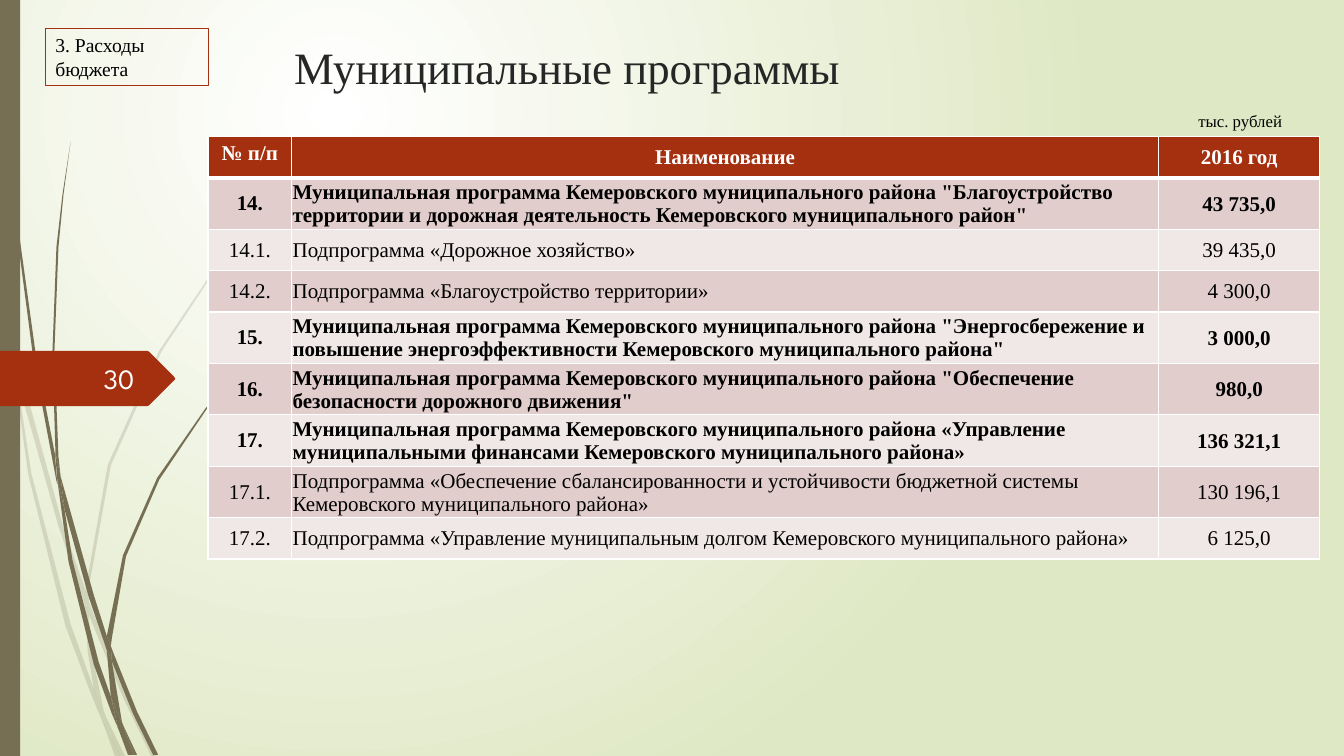
"""Slide with the municipal programmes of the district budget."""
from lxml import etree
from pptx import Presentation
from pptx.dml.color import RGBColor
from pptx.enum import shapes, text
from pptx.oxml import parse_xml
from pptx.oxml import ns
from pptx.util import Pt

OLIVE = RGBColor(0x76, 0x6F, 0x54)
RUST = RGBColor(0xA5, 0x30, 0x10)
ROSE = RGBColor(0xE1, 0xCD, 0xCC)
PALE_ROSE = RGBColor(0xF0, 0xE8, 0xE7)
MEADOW = RGBColor(0xDF, 0xE8, 0xC4)
WHITE = RGBColor(0xFF, 0xFF, 0xFF)
NUMBER_WHITE = RGBColor(0xFE, 0xFF, 0xFF)
BLACK = RGBColor(0, 0, 0)
CHARCOAL = RGBColor(0x26, 0x26, 0x26)

SERIF = "Times New Roman"
OUTLINE_UNIT = Pt(0.72)
LEFT, CENTER, RIGHT = text.PP_ALIGN.LEFT, text.PP_ALIGN.CENTER, text.PP_ALIGN.RIGHT
TOP, MIDDLE = text.MSO_ANCHOR.TOP, text.MSO_ANCHOR.MIDDLE

FAINT_STALKS = [
    [(11, 350), (9, 322), (0, 282), (0, 299), (10, 344)],
    [(58, 522), (84, 599), (85, 586), (62, 520), (14, 345), (17, 376)],
    [(92, 607), (88, 596), (88, 610), (123, 694), (150, 750), (155, 750), (127, 692)],
    [(119, 750), (124, 750), (105, 711)],
    [(93, 683), (70, 619), (31, 469), (17, 376), (11, 350), (28, 470), (65, 621),
     (92, 693), (101, 714), (99, 707)],
    [(84, 599), (87, 646), (93, 683), (96, 692), (105, 711), (103, 706), (91, 646),
     (88, 610), (88, 608)],
    [(88, 584), (110, 462), (160, 349), (229, 245), (268, 198), (290, 175), (312, 154),
     (312, 153), (289, 175), (268, 197), (228, 244), (158, 348), (107, 461), (85, 584),
     (85, 586), (88, 596)],
    [(101, 714), (114, 750), (119, 750)],
    [(88, 608), (88, 610), (88, 596), (85, 586), (84, 599)],
    [(96, 692), (93, 683), (99, 707), (101, 714), (119, 750), (105, 711)],
]

DARK_STALKS = [
    [(7, 110), (17, 233), (33, 355), (56, 477), (57, 481), (55, 457), (55, 453),
     (36, 355), (19, 232), (8, 109), (5, 48), (4, 0), (3, 0), (4, 48)],
    [(88, 592), (106, 645), (106, 633), (106, 631), (93, 590), (60, 472), (64, 505)],
    [(113, 649), (110, 641), (111, 656), (132, 708), (152, 749), (157, 749), (136, 706)],
    [(110, 691), (98, 657), (72, 556), (64, 505), (57, 477), (68, 557), (93, 659),
     (111, 708), (117, 722), (116, 717)],
    [(60, 472), (58, 453), (54, 349), (58, 245), (63, 193), (70, 141), (62, 193),
     (56, 245), (52, 349), (55, 449)],
    [(133, 749), (136, 749), (122, 719)],
    [(57, 477), (64, 505), (60, 472), (55, 449), (55, 453)],
    [(111, 633), (125, 552), (158, 476), (205, 406), (231, 374), (245, 359), (261, 344),
     (260, 344), (245, 358), (231, 373), (204, 405), (156, 474), (122, 551), (106, 631),
     (110, 641)],
    [(117, 722), (127, 749), (131, 749)],
    [(106, 645), (110, 691), (116, 706), (122, 719), (121, 716), (111, 656), (109, 651)],
    [(106, 645), (109, 651), (111, 656), (110, 641), (106, 631), (106, 633)],
    [(116, 706), (110, 691), (116, 717), (117, 722), (130, 749), (133, 749), (122, 719)],
]

PAGE_MARKER = [(0, 348), (146, 348), (148, 349), (173, 374), (174, 375.5), (173, 377),
               (148, 402), (146, 403), (0, 403)]

COLUMN_WIDTHS = [59.76, 619.2, 115.2]
ROW_HEIGHT = 29.52
HEADINGS = ("№ п/п", "Наименование", "2016 год")
PROGRAMMES = [
    ("14.", 'Муниципальная программа Кемеровского муниципального района "Благоустройство '
            'территории и дорожная деятельность Кемеровского муниципального район"', "43 735,0"),
    ("14.1.", "Подпрограмма «Дорожное хозяйство»", "39 435,0"),
    ("14.2.", "Подпрограмма «Благоустройство территории»", "4 300,0"),
    ("15.", 'Муниципальная программа Кемеровского муниципального района "Энергосбережение и '
            'повышение энергоэффективности Кемеровского муниципального района"', "3 000,0"),
    ("16.", 'Муниципальная программа Кемеровского муниципального района "Обеспечение '
            'безопасности дорожного движения"', "980,0"),
    ("17.", "Муниципальная программа Кемеровского муниципального района «Управление "
            "муниципальными финансами Кемеровского муниципального района»", "136 321,1"),
    ("17.1.", "Подпрограмма «Обеспечение сбалансированности и устойчивости бюджетной системы "
              "Кемеровского муниципального района»", "130 196,1"),
    ("17.2.", "Подпрограмма «Управление муниципальным долгом Кемеровского муниципального "
              "района»", "6 125,0"),
]


def paint_background(slide):
    """Fill the slide with a round glow from white to green."""
    slide.element.cSld.insert(0, parse_xml(
        f'<p:bg {ns.nsdecls("p", "a")}><p:bgPr><a:gradFill rotWithShape="1"><a:gsLst>'
        f'<a:gs pos="0"><a:srgbClr val="{WHITE}"/></a:gs>'
        f'<a:gs pos="100000"><a:srgbClr val="{MEADOW}"/></a:gs></a:gsLst>'
        '<a:path path="circle"><a:fillToRect l="25000" t="15000" r="75000" b="85000"/></a:path>'
        '</a:gradFill><a:effectLst/></p:bgPr></p:bg>'))


def paint(shape, color, opacity=100):
    """Give a shape a plain fill without line or shadow."""
    shape.shadow.inherit = False
    shape.line.fill.background()
    shape.fill.solid()
    shape.fill.fore_color.rgb = color
    if opacity < 100:
        tint = shape.element.spPr.find(".//" + ns.qn("a:srgbClr"))
        etree.SubElement(tint, ns.qn("a:alpha"), val=str(opacity * 1000))


def add_outline(slide, points, color, opacity=100):
    """Draw a closed outline through points given in outline units."""
    builder = slide.shapes.build_freeform(*points[0], scale=OUTLINE_UNIT)
    builder.add_line_segments(points[1:], close=True)
    paint(builder.convert_to_shape(), color, opacity)


def write(frame, words, size, color, align=LEFT, font=SERIF, bold=False):
    """Put one formatted paragraph into a text frame."""
    frame.word_wrap = True
    paragraph = frame.paragraphs[0]
    paragraph.text = words
    paragraph.alignment = align
    paragraph.font.name = font
    paragraph.font.size = Pt(size)
    paragraph.font.bold = bold
    paragraph.font.color.rgb = color


def add_label(slide, box, words, size, color, anchor=TOP, **style):
    """Add a text box and return it."""
    label = slide.shapes.add_textbox(*map(Pt, box))
    label.text_frame.vertical_anchor = anchor
    write(label.text_frame, words, size, color, **style)
    return label


def add_borders(cell, bottom):
    """Draw white borders round a table cell."""
    for side, width in (("L", 1), ("R", 1), ("T", 1), ("B", bottom)):
        cell._tc.get_or_add_tcPr().append(parse_xml(
            f'<a:ln{side} {ns.nsdecls("a")} w="{Pt(width)}"><a:solidFill>'
            f'<a:srgbClr val="{WHITE}"/></a:solidFill></a:ln{side}>'))


def add_programmes(slide):
    """Add the table of programmes and subprogrammes."""
    rows = [HEADINGS, *PROGRAMMES]
    programmes = slide.shapes.add_table(
        len(rows), len(HEADINGS), Pt(148.6), Pt(97.6),
        Pt(sum(COLUMN_WIDTHS)), Pt(ROW_HEIGHT * len(rows))).table
    programmes.horz_banding = False
    for column, width in zip(programmes.columns, COLUMN_WIDTHS):
        column.width = Pt(width)
    for r, entries in enumerate(rows):
        heading = r == 0
        bold = heading or entries[0].count(".") == 1
        fill = RUST if heading else (PALE_ROSE, ROSE)[r % 2]
        for c, words in enumerate(entries):
            cell = programmes.cell(r, c)
            add_borders(cell, 3 if heading else 1)
            cell.fill.solid()
            cell.fill.fore_color.rgb = fill
            cell.vertical_anchor = TOP if heading and c == 0 else MIDDLE
            if not heading and c > 0:
                cell.margin_left = cell.margin_right = cell.margin_top = Pt(0.72)
                cell.margin_bottom = 0
            write(cell.text_frame, words, 15, WHITE if heading else BLACK,
                  align=LEFT if c == 1 and not heading else CENTER, bold=bold)


def main():
    """Build the slide and save it."""
    deck = Presentation()
    deck.slide_width, deck.slide_height = Pt(960), Pt(540)
    slide = deck.slides.add_slide(deck.slide_layouts[6])
    paint_background(slide)
    for stalk in FAINT_STALKS:
        add_outline(slide, stalk, OLIVE, 20)
    for stalk in DARK_STALKS:
        add_outline(slide, stalk, OLIVE)
    edge = slide.shapes.add_shape(shapes.MSO_SHAPE.RECTANGLE, 0, 0, Pt(14.4), Pt(540))
    paint(edge, OLIVE)
    add_outline(slide, PAGE_MARKER, RUST)
    add_label(slide, (203, 20.2, 702, 55.4), "Муниципальные программы", 32, CHARCOAL, MIDDLE)
    add_label(slide, (41.8, 255.6, 61.2, 28.8), "30", 20, NUMBER_WHITE, MIDDLE,
              align=RIGHT, font="League Spartan")
    add_programmes(slide)
    add_label(slide, (848.9, 75.6, 93.6, 21.6), "тыс. рублей", 12, BLACK)
    section = add_label(slide, (32.4, 20.2, 116.6, 41), "3. Расходы бюджета", 14, BLACK)
    section.line.color.rgb = RUST
    section.line.width = Pt(0.75)
    deck.save("out.pptx")


if __name__ == "__main__":
    main()
